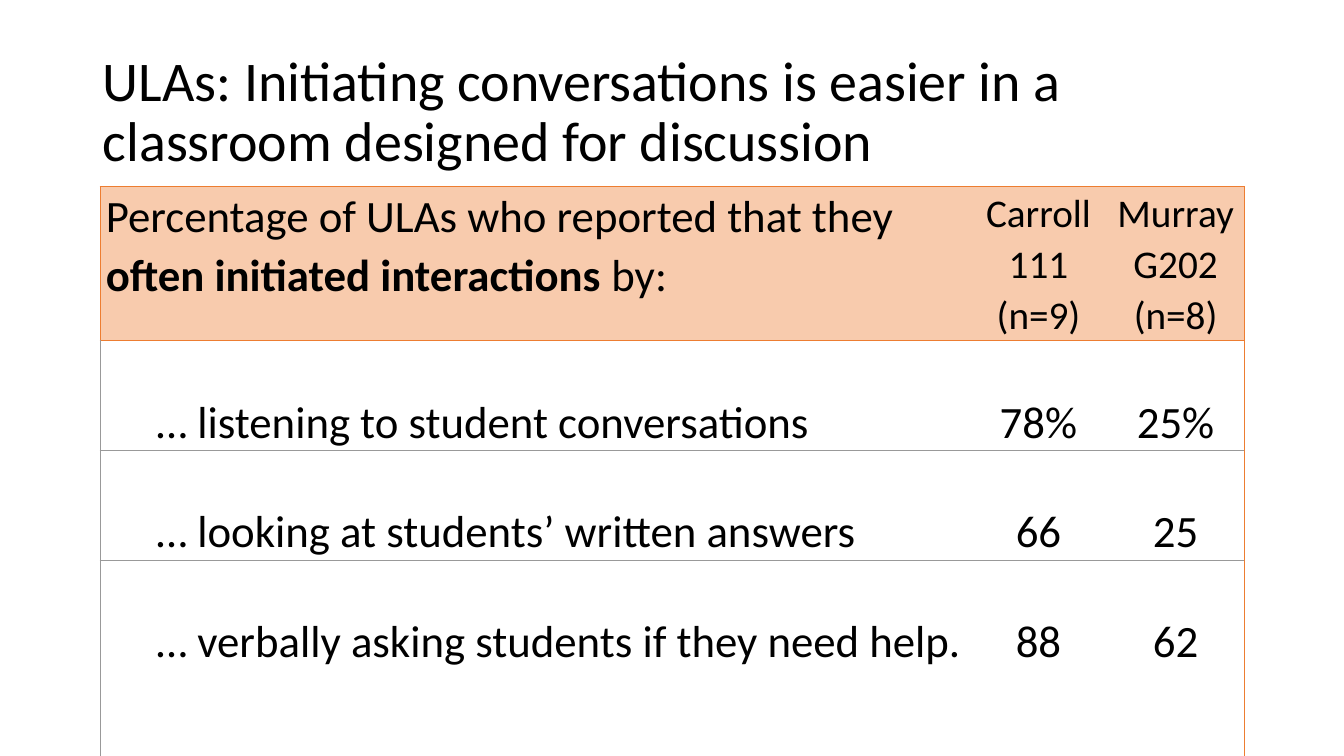
import dataclasses

import lxml.etree
import pptx
import pptx.dml.color
import pptx.enum.text
import pptx.oxml.ns
import pptx.util

Inches = pptx.util.Inches
Pt = pptx.util.Pt
PP_ALIGN = pptx.enum.text.PP_ALIGN
qn = pptx.oxml.ns.qn


@dataclasses.dataclass(frozen=True)
class Theme:
    font: str = "Calibri"
    text: str = "000000"
    header_fill: str = "F8CBAD"
    accent: str = "ED7D31"
    rule: str = "999999"
    title_size: int = 40
    body_size: int = 32
    column_size: int = 28
    border_width: float = 0.5


THEME = Theme()
PLAIN_TABLE_STYLE = "{2D5ABB26-0587-4C30-8999-92F81FD0307C}"
COLUMN_WIDTHS = (8.63, 1.36, 1.36)
ROW_HEIGHTS = (1.53, 1.09, 1.09, 1.95)

# Each header cell holds paragraphs, each paragraph its (text, bold) runs
HEADER = (
    [[("Percentage of ULAs who reported that they ", False),
      ("often initiated interactions", True), (" by:", False)]],
    [[("Carroll 111", False)], [("(n=9)", False)]],
    [[("Murray G202", False)], [("(n=8)", False)]],
)
RESULTS = (
    ("… listening to student conversations", "78%", "25%"),
    ("… looking at students’ written answers", "66", "25"),
    ("… verbally asking students if they need help.", "88", "62"),
)


def format_run(run, size, bold=False):
    run.font.name = THEME.font
    run.font.size = Pt(size)
    run.font.bold = bold
    run.font.color.rgb = pptx.dml.color.RGBColor.from_string(THEME.text)


def add_title(slide, text):
    title = slide.shapes.title
    title.left, title.top = Inches(0.92), Inches(0.4)
    title.width, title.height = Inches(11.5), Inches(1.45)
    frame = title.text_frame
    frame.text = text
    frame.auto_size = pptx.enum.text.MSO_AUTO_SIZE.NONE
    frame.vertical_anchor = pptx.enum.text.MSO_ANCHOR.MIDDLE
    paragraph = frame.paragraphs[0]
    paragraph.alignment = PP_ALIGN.LEFT
    paragraph.line_spacing = 0.9
    format_run(paragraph.runs[0], THEME.title_size)


def set_border(cell, side, color):
    """Draw one side of a cell: L, R, T or B."""
    properties = cell._tc.get_or_add_tcPr()
    line = lxml.etree.Element(qn(f"a:ln{side}"), w=str(Pt(THEME.border_width)))
    fill = lxml.etree.SubElement(line, qn("a:solidFill"))
    lxml.etree.SubElement(fill, qn("a:srgbClr"), val=color)
    # Borders come before the fill, in the order L, R, T, B
    position = len(properties.findall("*")) - len(properties.findall(qn("a:solidFill")))
    properties.insert(position, line)


def fill_cell(cell, paragraphs, size, line_spacing, centred):
    cell.margin_left = cell.margin_right = Inches(0.06)
    cell.margin_top = cell.margin_bottom = 0
    frame = cell.text_frame
    for index, runs in enumerate(paragraphs):
        paragraph = frame.paragraphs[0] if index == 0 else frame.add_paragraph()
        paragraph.line_spacing = line_spacing
        paragraph.alignment = PP_ALIGN.CENTER if centred else PP_ALIGN.LEFT
        for text, bold in runs:
            run = paragraph.add_run()
            run.text = text
            format_run(run, size, bold)


def fill_header(table):
    for column, paragraphs in enumerate(HEADER):
        cell = table.cell(0, column)
        size = THEME.column_size if column else THEME.body_size
        fill_cell(cell, paragraphs, size, 1.07, column > 0)
        cell.fill.solid()
        cell.fill.fore_color.rgb = pptx.dml.color.RGBColor.from_string(THEME.header_fill)


def fill_results(table):
    for row, values in enumerate(RESULTS, start=1):
        for column, text in enumerate(values):
            cell = table.cell(row, column)
            fill_cell(cell, [[(text, False)]], THEME.body_size, 2.0, column > 0)
            paragraph = cell.text_frame.paragraphs[0]
            paragraph.space_after = Pt(12)
            if column == 0:
                paragraph.level = 1
                properties = paragraph._p.get_or_add_pPr()
                properties.set("marL", str(Inches(0.5)))
                properties.set("indent", "0")


def draw_borders(table):
    last_row, last_column = len(ROW_HEIGHTS) - 1, len(COLUMN_WIDTHS) - 1
    for row in range(last_row + 1):
        for column in range(last_column + 1):
            cell = table.cell(row, column)
            if column == 0:
                set_border(cell, "L", THEME.rule if row else THEME.accent)
            if column == last_column:
                set_border(cell, "R", THEME.accent)
            set_border(cell, "T", THEME.accent if row < 2 else THEME.rule)
            outer = row in (0, last_row)
            set_border(cell, "B", THEME.accent if outer else THEME.rule)


def add_results_table(slide):
    frame = slide.shapes.add_table(
        len(ROW_HEIGHTS), len(COLUMN_WIDTHS), Inches(0.99), Inches(1.85),
        Inches(sum(COLUMN_WIDTHS)), Inches(sum(ROW_HEIGHTS)))
    table = frame.table
    table.horz_banding = False
    table._tbl.tblPr.find(qn("a:tableStyleId")).text = PLAIN_TABLE_STYLE
    for column, width in zip(table.columns, COLUMN_WIDTHS):
        column.width = Inches(width)
    for row, height in zip(table.rows, ROW_HEIGHTS):
        row.height = Inches(height)
    fill_header(table)
    fill_results(table)
    draw_borders(table)


def main():
    presentation = pptx.Presentation()
    presentation.slide_width = Inches(13.33)
    presentation.slide_height = Inches(7.5)
    slide = presentation.slides.add_slide(presentation.slide_layouts[5])
    add_title(slide, "ULAs: Initiating conversations is easier in a "
                     "classroom designed for discussion")
    add_results_table(slide)
    presentation.save("out.pptx")


if __name__ == "__main__":
    main()
